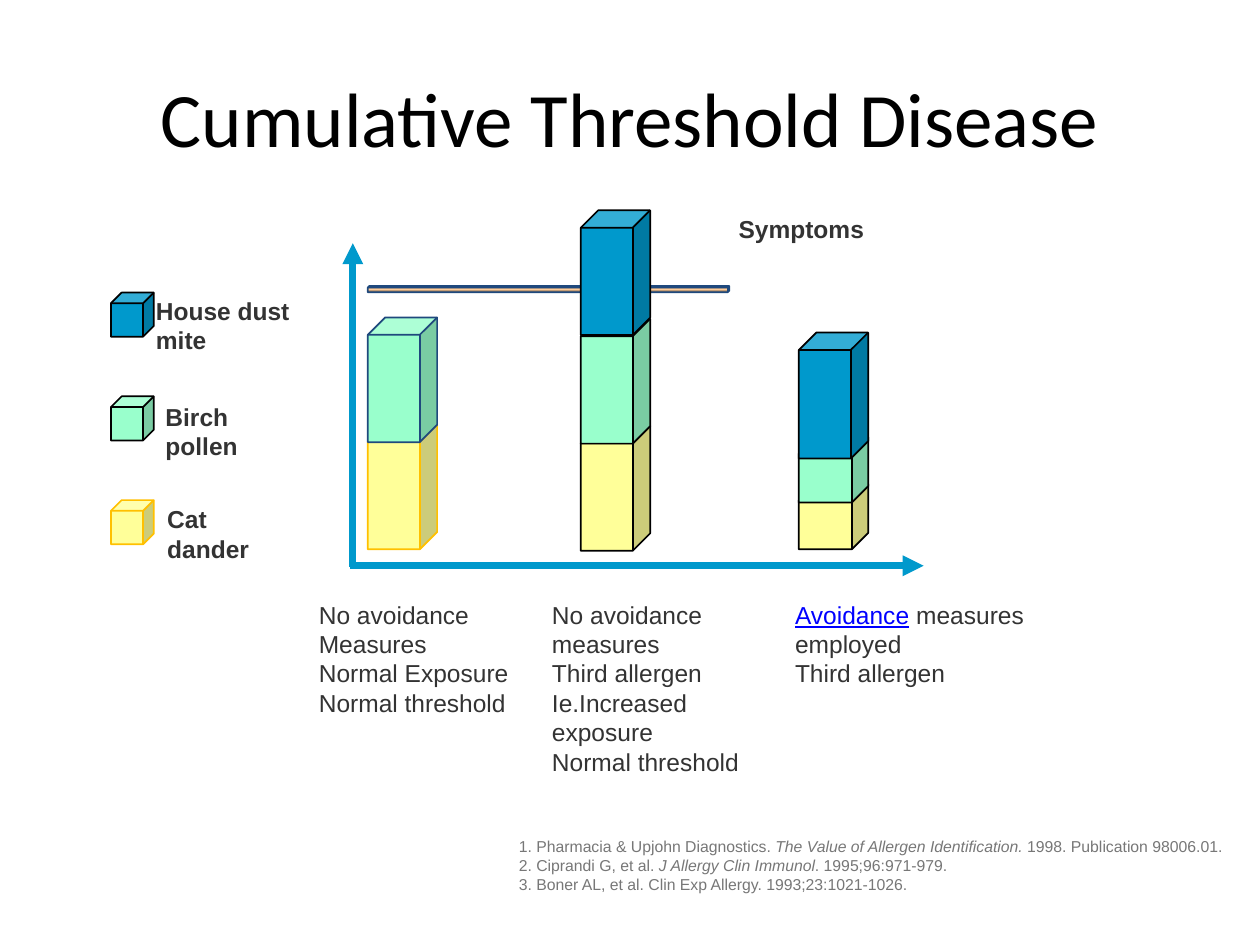
from copy import deepcopy
from dataclasses import dataclass

from lxml import etree
from pptx import Presentation
from pptx.dml.color import RGBColor
from pptx.enum.shapes import MSO_CONNECTOR, MSO_SHAPE
from pptx.enum.text import MSO_ANCHOR, PP_ALIGN
from pptx.oxml.ns import qn
from pptx.util import Pt

CUBE = MSO_SHAPE.CUBE
STRAIGHT = MSO_CONNECTOR.STRAIGHT
LEFT, CENTER = PP_ALIGN.LEFT, PP_ALIGN.CENTER
TOP, MIDDLE = MSO_ANCHOR.TOP, MSO_ANCHOR.MIDDLE

COLORS = {
    "black": "000000", "text": "333333", "reference": "777777", "link": "0000FF",
    "cat": "FFFF99", "birch": "99FFCC", "mite": "0099CC", "axis": "0099CC",
    "gold": "FFC000", "navy": "1F497D", "tan": "FFCC99", "brown": "7F664C",
}
BAR_WIDTH = 39.6
LEGEND_LEFT, LEGEND_WIDTH, LEGEND_HEIGHT = 63.4, 24.5, 25.2


@dataclass
class Segment:
    allergen: str
    top: float
    height: float
    outline: str = "black"


@dataclass
class Bar:
    left: float
    segments: list[Segment]


@dataclass
class LegendEntry:
    cube: Segment
    label: str
    label_left: float
    label_top: float
    label_width: float


@dataclass
class Style:
    size: float = 14
    color: str = "text"
    font: str = "Arial"
    bold: bool = False
    align: PP_ALIGN = LEFT
    anchor: MSO_ANCHOR = TOP


@dataclass
class Caption:
    left: float
    width: float
    height: float
    lines: list


BAR_NO_AVOIDANCE = Bar(210.2, [Segment("cat", 242.6, 71.3, "gold"),
                               Segment("birch", 181.4, 71.3, "navy")])
BAR_THIRD_ALLERGEN = Bar(331.9, [Segment("cat", 243.4, 71.3),
                                 Segment("birch", 182.2, 71.3),
                                 Segment("mite", 120.2, 71.3)])
BAR_AVOIDANCE = Bar(456.5, [Segment("cat", 276.5, 37.4),
                            Segment("birch", 249.8, 37.4),
                            Segment("mite", 190.1, 72)])
LEGEND = [
    LegendEntry(Segment("cat", 285.8, LEGEND_HEIGHT, "gold"), "Cat dander", 88.5, 283.2, 80),
    LegendEntry(Segment("birch", 226.5, LEGEND_HEIGHT), "Birch pollen", 87.5, 224.5, 88.6),
    LegendEntry(Segment("mite", 167.2, LEGEND_HEIGHT), "House dust mite", 82, 164.2, 116.6),
]
CAPTIONS = [
    Caption(178.6, 117.4, 74.9,
            ["No avoidance", "Measures", "Normal Exposure", "Normal threshold"]),
    Caption(311.8, 121.7, 108.7,
            ["No avoidance", "measures", "Third allergen", "Ie.Increased exposure",
             "Normal threshold"]),
    Caption(450.7, 140.4, 58.3,
            [["Avoidance", " measures"], "employed", "Third allergen"]),
]
REFERENCES = [
    ["1. Pharmacia & Upjohn Diagnostics. ", "The Value of Allergen Identification. ",
     "1998. Publication 98006.01."],
    ["2. Ciprandi G, et al. ", "J Allergy Clin Immunol", ". 1995;96:971-979."],
    "3. Boner AL, et al. Clin Exp Allergy. 1993;23:1021-1026.",
]


def rgb(name: str) -> RGBColor:
    return RGBColor.from_string(COLORS[name])


def add_text(slide, left: float, top: float, width: float, height: float,
             lines: list, style: Style, insets: tuple = (7.2, 3.6)):
    """Add one paragraph per line; a line given as a list has one run per item."""
    frame = slide.shapes.add_textbox(Pt(left), Pt(top), Pt(width), Pt(height)).text_frame
    frame.word_wrap = True
    frame.vertical_anchor = style.anchor
    frame.margin_left = frame.margin_right = Pt(insets[0])
    frame.margin_top = frame.margin_bottom = Pt(insets[1])
    for index, line in enumerate(lines):
        paragraph = frame.paragraphs[0] if index == 0 else frame.add_paragraph()
        paragraph.alignment = style.align
        for text in [line] if isinstance(line, str) else line:
            run = paragraph.add_run()
            run.text = text
            run.font.size = Pt(style.size)
            run.font.name = style.font
            run.font.bold = style.bold
            run.font.color.rgb = rgb(style.color)
    return frame


def add_cube(slide, left: float, top: float, width: float, height: float, outline: str):
    cube = slide.shapes.add_shape(CUBE, Pt(left), Pt(top), Pt(width), Pt(height))
    cube.shadow.inherit = False
    cube.line.color.rgb = rgb(outline)
    cube.line.width = Pt(1)
    return cube


def add_segment(slide, left: float, width: float, segment: Segment) -> None:
    cube = add_cube(slide, left, segment.top, width, segment.height, segment.outline)
    cube.fill.solid()
    cube.fill.fore_color.rgb = rgb(segment.allergen)


def add_bar(slide, bar: Bar) -> None:
    for segment in bar.segments:
        add_segment(slide, bar.left, BAR_WIDTH, segment)


def add_threshold(slide) -> None:
    """Draw the symptom threshold with a brown, tan, brown vertical gradient."""
    fill = add_cube(slide, 210.2, 163.4, 206.6, 3.6, "navy").fill
    fill.gradient()
    fill.gradient_angle = 90
    first, last = fill.gradient_stops
    for stop, position in ((first, 0), (last, 1)):
        stop.color.rgb = rgb("brown")
        stop.position = position
    stop_list = slide.shapes[-1].fill._xPr.find(qn("a:gradFill")).find(qn("a:gsLst"))
    stop_list.insert(1, deepcopy(stop_list[0]))
    middle = fill.gradient_stops[1]
    middle.color.rgb = rgb("tan")
    middle.position = 0.5


def add_axis(slide, tip: tuple[float, float], origin: tuple[float, float]) -> None:
    axis = slide.shapes.add_connector(STRAIGHT, *(Pt(value) for value in tip + origin))
    axis.line.color.rgb = rgb("axis")
    axis.line.width = Pt(4)
    etree.SubElement(axis.line._get_or_add_ln(), qn("a:headEnd"), type="triangle")
    etree.SubElement(axis._element.spPr, qn("a:effectLst"))


def main() -> None:
    presentation = Presentation()
    presentation.slide_width, presentation.slide_height = Pt(720), Pt(540)
    slide = presentation.slides.add_slide(presentation.slide_layouts[6])

    add_text(slide, 36, 21.6, 648, 90, ["Cumulative Threshold Disease"],
             Style(44, "black", "Calibri", align=CENTER, anchor=MIDDLE))
    references = add_text(slide, 289.4, 474.5, 430.6, 51.1, REFERENCES,
                          Style(9, "reference"))
    for paragraph in references.paragraphs[:2]:
        paragraph.runs[1].font.italic = True

    add_bar(slide, BAR_NO_AVOIDANCE)
    add_bar(slide, BAR_AVOIDANCE)
    add_threshold(slide)
    add_bar(slide, BAR_THIRD_ALLERGEN)

    label_style = Style(bold=True)
    add_text(slide, 313.2, 113.8, 289.4, 99.4, ["Symptoms"],
             Style(bold=True, align=CENTER), (82.8, 9.4))
    for caption in CAPTIONS:
        frame = add_text(slide, caption.left, 339.1, caption.width, caption.height,
                         caption.lines, Style(), (3.6, 3.6))
    link_font = frame.paragraphs[0].runs[0].font
    link_font.color.rgb = rgb("link")
    link_font.underline = True

    add_axis(slide, (201.6, 139), (201.6, 324))
    add_axis(slide, (527.8, 323.3), (200.2, 323.3))
    for entry in LEGEND:
        add_segment(slide, LEGEND_LEFT, LEGEND_WIDTH, entry.cube)
        add_text(slide, entry.label_left, entry.label_top, entry.label_width, 31,
                 [entry.label], label_style, (7.2, 5))

    presentation.save("out.pptx")


if __name__ == "__main__":
    main()
